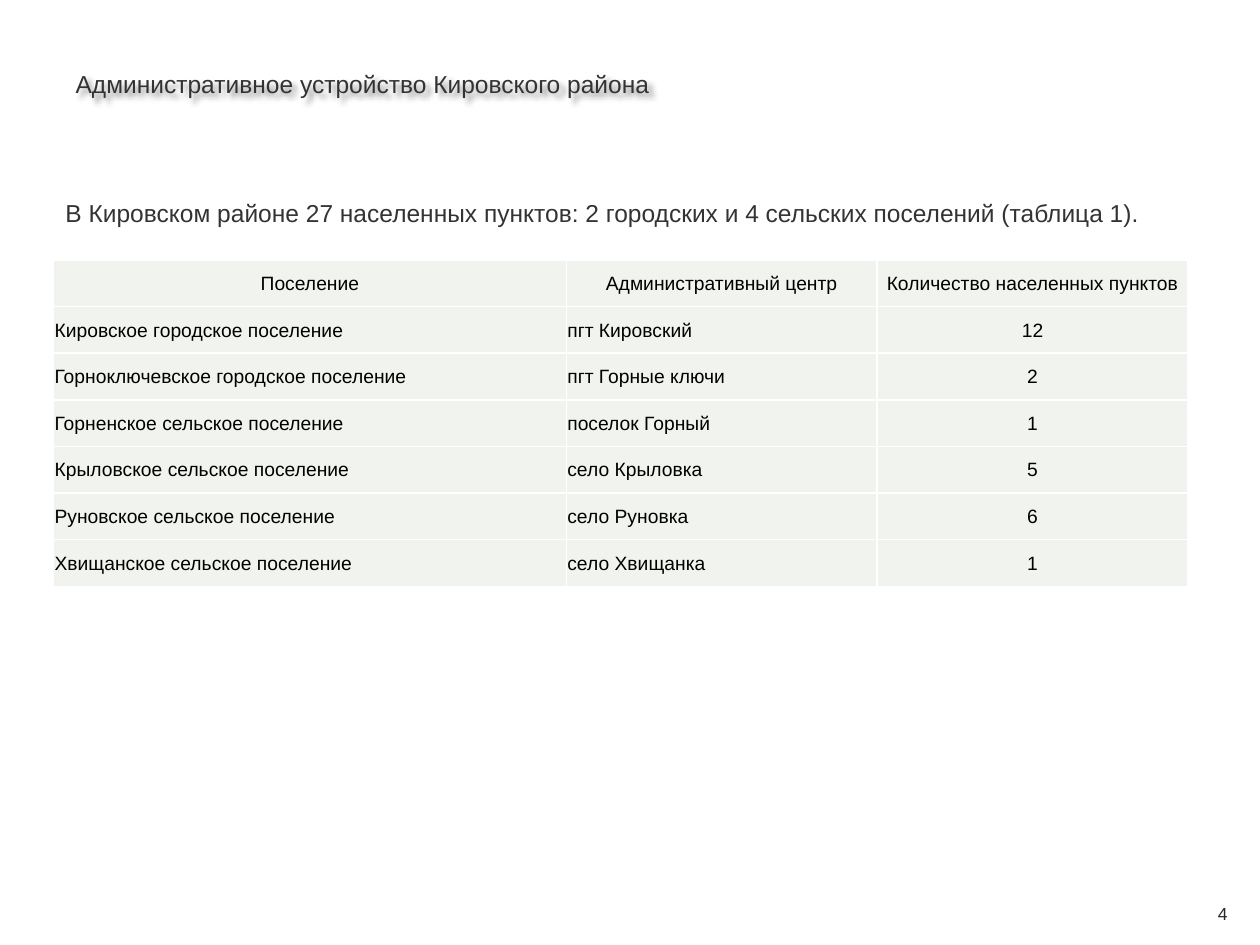
from dataclasses import dataclass

from lxml.etree import SubElement
from pptx import Presentation
from pptx.dml.color import RGBColor
from pptx.enum.text import MSO_ANCHOR, PP_ALIGN
from pptx.oxml.ns import qn
from pptx.util import Cm, Pt


@dataclass(frozen=True)
class Theme:
    font: str = "Arial"
    text: str = "333333"
    number: str = "262626"
    cell_text: str = "000000"
    cell_fill: str = "F0F3EE"
    border: str = "FFFFFF"
    shadow: str = "000000"
    heading_size: int = 14
    cell_size: int = 11
    number_size: int = 10


@dataclass(frozen=True)
class Box:
    left: float
    top: float
    width: float
    height: float

    def lengths(self):
        return Cm(self.left), Cm(self.top), Cm(self.width), Cm(self.height)


THEME = Theme()
TITLE = "Административное устройство Кировского района"
SUMMARY = "В Кировском районе 27 населенных пунктов: 2 городских и 4 сельских поселений (таблица 1)."
COLUMN_SHARES = (0.452, 0.274, 0.274)
SETTLEMENTS = (
    ("Поселение", "Административный центр", "Количество населенных пунктов"),
    ("Кировское городское поселение", "пгт Кировский", "12"),
    ("Горноключевское городское поселение", "пгт Горные ключи", "2"),
    ("Горненское сельское поселение", "поселок Горный", "1"),
    ("Крыловское сельское поселение", "село Крыловка", "5"),
    ("Руновское сельское поселение", "село Руновка", "6"),
    ("Хвищанское сельское поселение", "село Хвищанка", "1"),
)


def write_text(text_frame, text, size, color, alignment=PP_ALIGN.LEFT):
    text_frame.text = text
    paragraph = text_frame.paragraphs[0]
    paragraph.alignment = alignment
    paragraph.font.name = THEME.font
    paragraph.font.size = Pt(size)
    paragraph.font.color.rgb = RGBColor.from_string(color)


def add_soft_shadow(shape):
    effects = SubElement(shape.element.spPr, qn("a:effectLst"))
    shadow = SubElement(effects, qn("a:outerShdw"), blurRad="38100", dist="38100",
                        dir="2700000", algn="tl", rotWithShape="0")
    color = SubElement(shadow, qn("a:srgbClr"), val=THEME.shadow)
    SubElement(color, qn("a:alpha"), val="43000")


def place_title(slide, box):
    title = slide.shapes.title
    title.left, title.top, title.width, title.height = box.lengths()
    title.text_frame.vertical_anchor = MSO_ANCHOR.MIDDLE
    write_text(title.text_frame, TITLE, THEME.heading_size, THEME.text)
    add_soft_shadow(title)


def add_label(slide, box, text, size, color, alignment, anchor):
    text_frame = slide.shapes.add_textbox(*box.lengths()).text_frame
    text_frame.word_wrap = True
    text_frame.vertical_anchor = anchor
    write_text(text_frame, text, size, color, alignment)


def format_cell(cell, text, alignment):
    cell.vertical_anchor = MSO_ANCHOR.MIDDLE
    cell.margin_left = cell.margin_right = cell.margin_top = Cm(0.02)
    cell.margin_bottom = 0
    write_text(cell.text_frame, text, THEME.cell_size, THEME.cell_text, alignment)
    properties = cell._tc.get_or_add_tcPr()
    for side in ("lnL", "lnR", "lnT", "lnB"):
        line = SubElement(properties, qn(f"a:{side}"), w=str(Pt(1)))
        fill = SubElement(line, qn("a:solidFill"))
        SubElement(fill, qn("a:srgbClr"), val=THEME.border)
    cell.fill.solid()
    cell.fill.fore_color.rgb = RGBColor.from_string(THEME.cell_fill)


def add_settlement_table(slide, box):
    table = slide.shapes.add_table(len(SETTLEMENTS), len(COLUMN_SHARES), *box.lengths()).table
    for column, share in zip(table.columns, COLUMN_SHARES):
        column.width = Cm(box.width * share)
    last_column = len(COLUMN_SHARES) - 1
    for row_index, row in enumerate(SETTLEMENTS):
        table.rows[row_index].height = Cm(box.height / len(SETTLEMENTS))
        for column_index, text in enumerate(row):
            centred = row_index == 0 or column_index == last_column
            alignment = PP_ALIGN.CENTER if centred else PP_ALIGN.LEFT
            format_cell(table.cell(row_index, column_index), text, alignment)


def main():
    presentation = Presentation()
    presentation.slide_width = Cm(25.4)
    presentation.slide_height = Cm(19.05)
    slide = presentation.slides.add_slide(presentation.slide_layouts[5])
    place_title(slide, Box(1.27, 0.46, 23.5, 2.46))
    add_settlement_table(slide, Box(1.08, 5.24, 22.87, 6.58))
    add_label(slide, Box(24, 17.91, 1.3, 1.02), "4", THEME.number_size, THEME.number,
              PP_ALIGN.CENTER, MSO_ANCHOR.MIDDLE)
    add_label(slide, Box(1.07, 3.86, 23.16, 0.86), SUMMARY, THEME.heading_size, THEME.text,
              PP_ALIGN.LEFT, MSO_ANCHOR.TOP)
    presentation.save("out.pptx")


if __name__ == "__main__":
    main()
